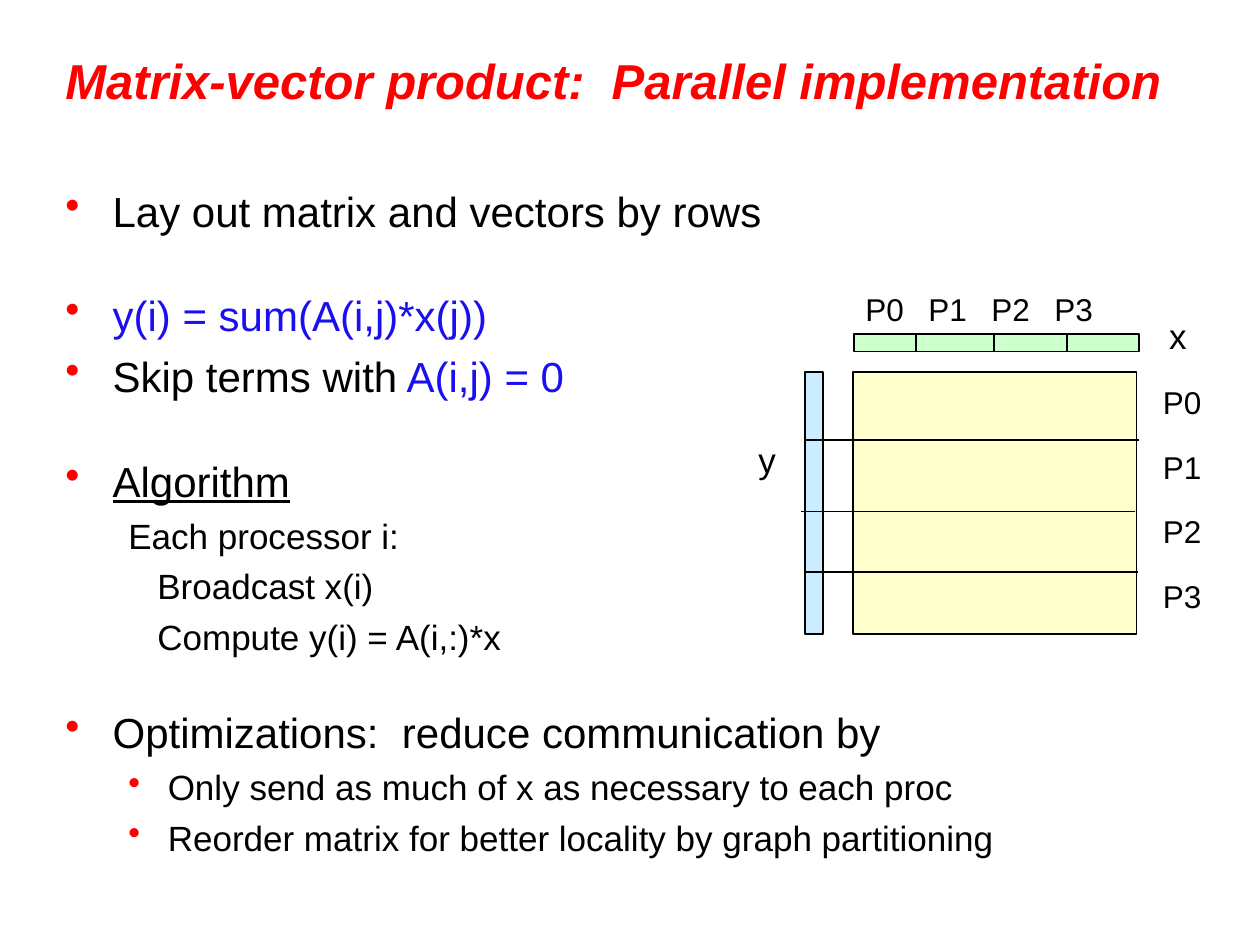
from dataclasses import dataclass

from lxml import etree
from pptx import Presentation
from pptx import util as u
from pptx.dml.color import RGBColor
from pptx.enum import shapes, text
from pptx.oxml.ns import qn

# The slide is a grid of 100 columns by 75 rows, so cells are square
WIDTH, HEIGHT = u.Inches(10), u.Inches(7.5)
COLUMNS, ROWS = 100, 75
FONT = "Arial"
BLACK, RED, BLUE = "000000", "FF0000", "1A0FEF"


@dataclass
class Area:
    left: float
    top: float
    width: float
    height: float

    def emu(self) -> tuple:
        return col(self.left), row(self.top), col(self.width), row(self.height)


@dataclass
class Line:
    """One paragraph: spans of (words, colour), with its size and indents."""
    spans: list
    size: float = 24
    before: float = 0
    margin: float = 0
    hanging: float = 0
    bold_italic: bool = False
    underline: bool = False
    tabs: tuple = ()


def col(count: float) -> int:
    return round(WIDTH * count / COLUMNS)


def row(count: float) -> int:
    return round(HEIGHT * count / ROWS)


def colour(value: str) -> RGBColor:
    return RGBColor.from_string(value)


def format_paragraph(para, line: Line) -> None:
    """Set indents, a red bullet for hanging lines, and tab stops."""
    props = para._p.get_or_add_pPr()
    props.set("marL", str(col(line.margin)))
    props.set("indent", str(-col(line.hanging)))
    if line.hanging:
        bullet_colour = etree.SubElement(props, qn("a:buClr"))
        etree.SubElement(bullet_colour, qn("a:srgbClr"), val=RED)
        etree.SubElement(props, qn("a:buChar"), char="•")
    if line.tabs:
        stops = etree.SubElement(props, qn("a:tabLst"))
        for stop in line.tabs:
            etree.SubElement(stops, qn("a:tab"), pos=str(col(stop)), algn="l")


def add_text(page, area: Area, lines: list, wrap: bool = True,
             anchor=text.MSO_ANCHOR.TOP) -> None:
    frame = page.shapes.add_textbox(*area.emu()).text_frame
    frame.word_wrap = wrap
    frame.vertical_anchor = anchor
    for index, line in enumerate(lines):
        para = frame.paragraphs[0] if index == 0 else frame.add_paragraph()
        para.space_before = u.Pt(line.before)
        font = para.font
        font.name, font.size = FONT, u.Pt(line.size)
        font.bold = font.italic = line.bold_italic
        font.underline = line.underline
        for words, value in line.spans:
            span = para.add_run()
            span.text = words
            span.font.color.rgb = colour(value)
            span.font.name, span.font.size = FONT, u.Pt(line.size)
            span.font.bold = span.font.italic = line.bold_italic
            span.font.underline = line.underline
        format_paragraph(para, line)


def add_block(page, area: Area, fill: str) -> None:
    block = page.shapes.add_shape(shapes.MSO_SHAPE.RECTANGLE, *area.emu())
    block.shadow.inherit = False
    block.fill.solid()
    block.fill.fore_color.rgb = colour(fill)
    block.line.color.rgb = colour(BLACK)
    block.line.width = u.Pt(1)


def add_divider(page, x1: float, y1: float, x2: float, y2: float) -> None:
    divider = page.shapes.add_connector(
        shapes.MSO_CONNECTOR.STRAIGHT, col(x1), row(y1), col(x2), row(y2))
    divider.line.color.rgb = colour(BLACK)
    divider.line.width = u.Pt(1)
    etree.SubElement(divider._element.spPr, qn("a:effectLst"))


def topic(*spans: tuple, before: float = 5.8, underline: bool = False) -> Line:
    return Line(list(spans), 24, before, 3.75, 3.75, underline=underline)


def step(words: str, margin: float) -> Line:
    return Line([(words, BLACK)], 20, 5, margin)


def detail(words: str) -> Line:
    return Line([(words, BLACK)], 20, 5, 8.13, 3.13)


def label(words: str, size: float = 18, before: float = 0,
          tabs: tuple = ()) -> Line:
    return Line([(words, BLACK)], size, before, tabs=tabs)


def add_body(page) -> None:
    section_gap = 31
    add_text(page, Area(4.2, 14.2, 95.8, 57.5), [
        topic(("Lay out matrix and vectors by rows", BLACK), before=0),
        topic(("y(i) = sum(A(i,j)*x(j))", BLUE), before=section_gap),
        topic(("Skip terms with", BLACK), (" A(i,j) = 0", BLUE)),
        topic(("Algorithm", BLACK), before=section_gap, underline=True),
        step("Each processor i:", 5),
        step("Broadcast x(i)", 7.3),
        step("Compute y(i) = A(i,:)*x", 7.3),
        topic(("Optimizations:  reduce communication by", BLACK), before=28),
        detail("Only send as much of x as necessary to each proc"),
        detail("Reorder matrix for better locality by graph partitioning"),
    ])


def add_diagram(page) -> None:
    matrix = Area(67.7, 29.5, 22.5, 20.8)
    y_vector = Area(63.9, 29.5, 1.4, 20.8)
    x_vector = Area(67.8, 26.5, 22.6, 1.4)
    for area, fill in ((matrix, "FFFFCC"), (y_vector, "CCECFF"),
                       (x_vector, "CCFFCC")):
        add_block(page, area, fill)

    # Vector names
    for name, left, top in (("x", 91.8, 24.5), ("y", 59.2, 34.3)):
        add_text(page, Area(left, top, 3.7, 4.3), [label(name, 20)])

    # Row boundaries run across both the matrix and y
    for right, y in ((90.4, 34.9), (90.1, 40.6), (90.3, 45.4)):
        add_divider(page, right, y, right - 26.5, y)
    # Boundaries inside x
    for x in (72.7, 78.9, 84.7):
        add_divider(page, x, x_vector.top, x, x_vector.top + x_vector.height)

    # Processor names beside the rows and above x
    processors = [f"P{number}" for number in range(4)]
    add_text(page, Area(91.3, 29.9, 5.1, 20.2),
             [label(name, before=15.3 if index else 0)
              for index, name in enumerate(processors)], wrap=False)
    add_text(page, Area(67.7, 22.5, 23.5, 4),
             [label("\t".join(processors), tabs=(5.15, 11, 17.5))])


def main() -> None:
    deck = Presentation()
    deck.slide_width, deck.slide_height = WIDTH, HEIGHT
    page = deck.slides.add_slide(deck.slide_layouts[6])
    add_body(page)
    add_diagram(page)
    # Title
    add_text(page, Area(4.2, 3, 93.1, 6.7),
             [Line([("Matrix-vector product:  Parallel implementation", RED)],
                   28, bold_italic=True)], anchor=text.MSO_ANCHOR.MIDDLE)
    deck.save("out.pptx")


if __name__ == "__main__":
    main()
